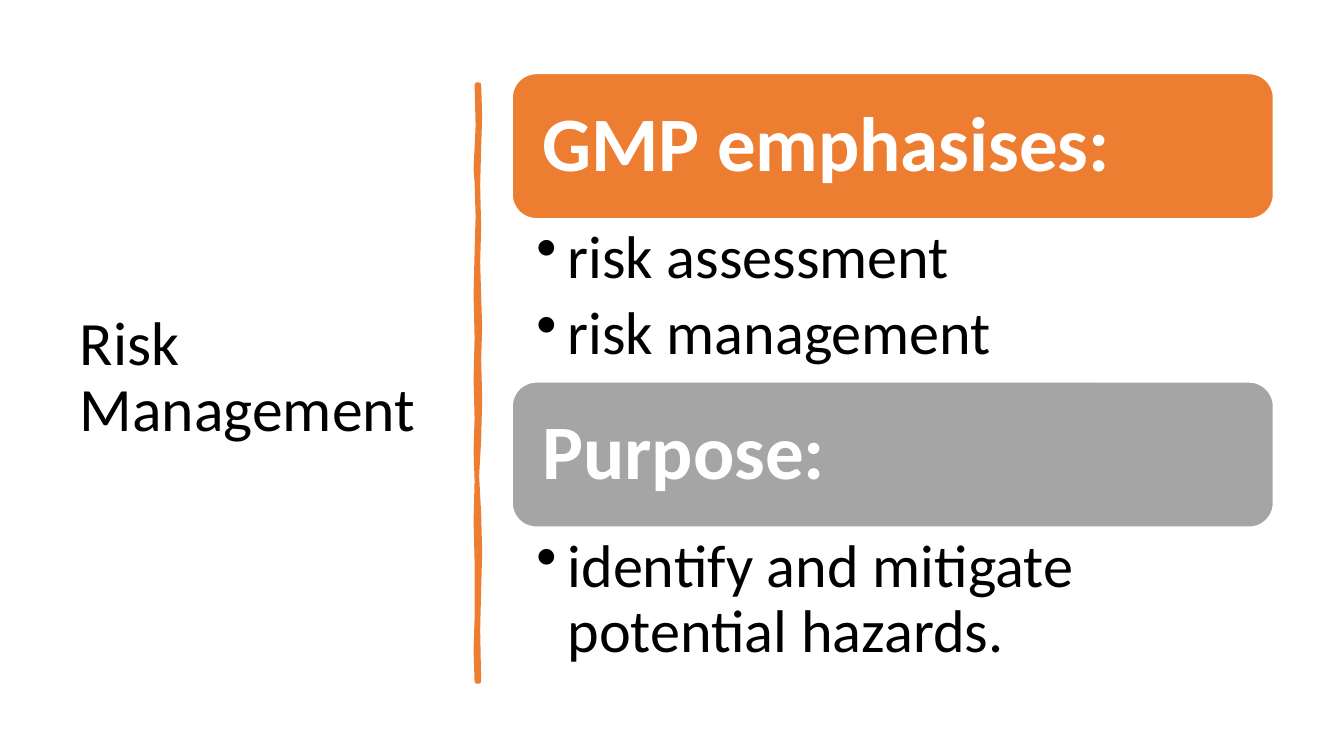
"""Build the Risk Management slide: title, hand-drawn divider, two headed lists."""
from dataclasses import dataclass

from lxml.etree import SubElement
from pptx import Presentation
from pptx.dml.color import RGBColor
from pptx.enum.shapes import MSO_SHAPE
from pptx.enum.text import MSO_ANCHOR, MSO_AUTO_SIZE, PP_ALIGN
from pptx.oxml.ns import qn
from pptx.util import Pt

PX = 9144


@dataclass
class Theme:
    face: str = "Calibri"
    ink: str = "000000"
    white: str = "FFFFFF"
    orange: str = "ED7D31"
    gray: str = "A5A5A5"
    title: int = 44
    head: int = 55
    item: int = 43


theme = Theme()


def set_frame(frame, pads, anchor):
    """Set insets, wrapping and anchor of a text frame."""
    frame.word_wrap = True
    frame.auto_size = MSO_AUTO_SIZE.NONE
    frame.vertical_anchor = anchor
    frame.margin_left, frame.margin_top, frame.margin_right, frame.margin_bottom = [
        pad * PX for pad in pads
    ]


def style(para, size, color, bold=False):
    """Format a paragraph and its runs."""
    para.alignment = PP_ALIGN.LEFT
    para.line_spacing = 0.9
    for run in para.runs:
        run.font.name = theme.face
        run.font.size = Pt(size)
        run.font.bold = bold
        run.font.color.rgb = RGBColor.from_string(color)


deck = Presentation()
deck.slide_width, deck.slide_height = 1333 * PX, 750 * PX
slide = deck.slides.add_slide(deck.slide_layouts[5])

title = slide.shapes.title
title.left, title.top, title.width, title.height = [n * PX for n in (69, 70, 374, 611)]
title.text_frame.text = "Risk Management"
set_frame(title.text_frame, (10, 5, 10, 5), MSO_ANCHOR.MIDDLE)
style(title.text_frame.paragraphs[0], theme.title, theme.ink)

right = [
    (475, 84), (476, 115), (475, 146), (474, 184), (475, 226), (474, 260),
    (475, 294), (476, 325), (475, 356), (476, 396), (475, 436), (473, 472),
    (475, 510), (476, 548), (475, 584), (474, 625), (475, 676),
]
left = [
    (473, 676), (472, 645), (473, 613), (473, 557), (472, 517), (473, 477),
    (472, 446), (473, 415), (472, 376), (473, 335), (472, 292), (473, 250),
    (474, 215), (473, 181), (472, 167), (474, 125), (473, 84),
]
pen = slide.shapes.build_freeform(*right[0], scale=PX)
pen.add_line_segments(right[1:] + left, close=True)
rule = pen.convert_to_shape()
rule.shadow.inherit = False
rule.fill.solid()
rule.fill.fore_color.rgb = RGBColor.from_string(theme.orange)
rule.line.color.rgb = RGBColor.from_string(theme.orange)
rule.line.width = Pt(3.25)

x, wide, tall = 508, 755, 144
groups = [
    (73, 162, theme.orange, "GMP emphasises:", ["risk assessment", "risk management"]),
    (379, 149, theme.gray, "Purpose:", ["identify and mitigate potential hazards."]),
]
for top, depth, color, head, items in groups:
    bar = slide.shapes.add_shape(
        MSO_SHAPE.ROUNDED_RECTANGLE, x * PX, top * PX, wide * PX, tall * PX
    )
    bar.shadow.inherit = False
    bar.fill.solid()
    bar.fill.fore_color.rgb = RGBColor.from_string(color)
    bar.line.color.rgb = RGBColor.from_string(theme.white)
    bar.line.width = Pt(1)
    bar.text_frame.text = head
    set_frame(bar.text_frame, (23, 23, 23, 23), MSO_ANCHOR.MIDDLE)
    style(bar.text_frame.paragraphs[0], theme.head, theme.white, True)

    box = slide.shapes.add_textbox(x * PX, (top + tall) * PX, wide * PX, depth * PX)
    box.text_frame.text = "\n".join(items)
    set_frame(box.text_frame, (24, 8, 43, 8), MSO_ANCHOR.TOP)
    for para in box.text_frame.paragraphs:
        props = para._p.get_or_add_pPr()
        props.set("marL", str(31 * PX))
        props.set("indent", str(-31 * PX))
        SubElement(props, qn("a:buChar")).set("char", "•")
        para.space_after = Pt(8)
        style(para, theme.item, theme.ink)

deck.save("out.pptx")
